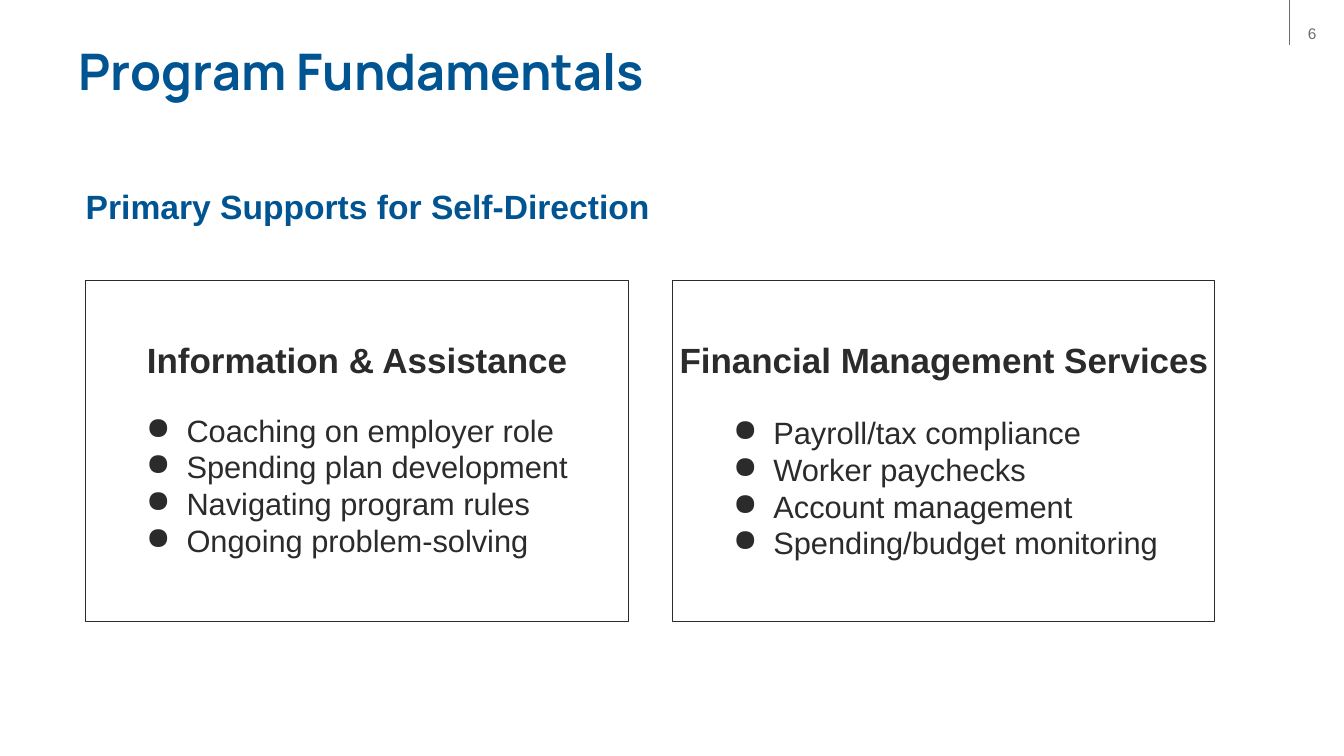
import pptx
import pptx.util
import pptx.dml.color
import pptx.enum.shapes
import pptx.enum.text
import pptx.oxml.ns
import lxml.etree

WIDE, HIGH = 13.33, 7.5
HUES = {"blue": "005492", "ink": "2B2B2B", "gray": "6D6D6D"}
ALIGN = pptx.enum.text.PP_ALIGN
ANCHOR = pptx.enum.text.MSO_ANCHOR
CARDS = [
    ("Information & Assistance", 22, [
        "Coaching on employer role", "Spending plan development",
        "Navigating program rules", "Ongoing problem-solving"]),
    ("Financial Management Services", 23.5, [
        "Payroll/tax compliance", "Worker paychecks",
        "Account management", "Spending/budget monitoring"]),
]


def across(share):
    """Turn a percentage of the slide width into a length."""
    return pptx.util.Inches(WIDE * share / 100)


def down(share):
    """Turn a percentage of the slide height into a length."""
    return pptx.util.Inches(HIGH * share / 100)


def area(left, top, width, height):
    """Return a box given in percentages of the slide."""
    return across(left), down(top), across(width), down(height)


def hue(name):
    """Look up a named colour."""
    return pptx.dml.color.RGBColor.from_string(HUES[name])


def frame(shape, anchor=ANCHOR.TOP, top=0):
    """Prepare a wrapped text frame without side margins."""
    text = shape.text_frame
    text.word_wrap = True
    text.auto_size = pptx.enum.text.MSO_AUTO_SIZE.NONE
    text.vertical_anchor = anchor
    text.margin_left = text.margin_right = text.margin_bottom = 0
    text.margin_top = down(top)
    return text


def write(para, words, size, color, bold=False, face="Arial", align=ALIGN.LEFT):
    """Add one styled run to a paragraph."""
    para.alignment = align
    run = para.add_run()
    run.text = words
    run.font.name = face
    run.font.size = pptx.util.Pt(size)
    run.font.bold = bold
    run.font.color.rgb = hue(color)


def bullet(para):
    """Give a paragraph a round bullet and a hanging indent."""
    props = para._p.get_or_add_pPr()
    props.set("marL", str(pptx.util.Inches(1)))
    props.set("indent", str(pptx.util.Inches(-0.4)))
    qn = pptx.oxml.ns.qn
    tint = lxml.etree.SubElement(props, qn("a:buClr"))
    lxml.etree.SubElement(tint, qn("a:srgbClr"), val=HUES["ink"])
    lxml.etree.SubElement(props, qn("a:buChar"), char="●")


def title(slide, words):
    """Place and fill the slide title."""
    shape = slide.shapes.title
    shape.left, shape.top, shape.width, shape.height = area(5.85, 3.2, 85.37, 13.33)
    para = frame(shape, ANCHOR.MIDDLE).paragraphs[0]
    para.line_spacing = 0.9
    write(para, words, 36, "blue", True, "Manrope")


def label(slide, box, words, size, color, **style):
    """Add a one-line text box."""
    para = frame(slide.shapes.add_textbox(*box)).paragraphs[0]
    para.line_spacing = 0.9 if style.get("bold") else 1
    write(para, words, size, color, **style)


def rule(slide):
    """Draw the upright line beside the page number."""
    x = across(95.95)
    kind = pptx.enum.shapes.MSO_CONNECTOR.STRAIGHT
    line = slide.shapes.add_connector(kind, x, 0, x, down(6))
    line.line.color.rgb = hue("gray")
    line.line.width = pptx.util.Pt(0.75)
    lxml.etree.SubElement(line._element.spPr, pptx.oxml.ns.qn("a:effectLst"))


def card(slide, box, head, gap, items):
    """Add an outlined card with a heading and bullets."""
    kind = pptx.enum.shapes.MSO_SHAPE.RECTANGLE
    shape = slide.shapes.add_shape(kind, *box)
    shape.shadow.inherit = False
    shape.fill.background()
    shape.line.color.rgb = hue("ink")
    shape.line.width = pptx.util.Pt(0.75)
    text = frame(shape, top=7.7)
    para = text.paragraphs[0]
    para.space_after = pptx.util.Pt(gap)
    write(para, head, 25, "ink", True, align=ALIGN.CENTER)
    for item in items:
        para = text.add_paragraph()
        bullet(para)
        write(para, item, 22, "ink")


def main():
    """Build the slide and save it."""
    deck = pptx.Presentation()
    deck.slide_width, deck.slide_height = across(100), down(100)
    slide = deck.slides.add_slide(deck.slide_layouts[5])
    label(slide, area(95.95, 3.2, 3.38, 3.6), "6", 11, "gray", align=ALIGN.CENTER)
    rule(slide)
    title(slide, "Program Fundamentals")
    label(slide, area(6.38, 25.2, 87.32, 7.07),
          "Primary Supports for Self-Direction", 24, "blue", bold=True)
    for col, (head, gap, items) in enumerate(CARDS):
        box = area(6.38 + 43.66 * col, 37.07, 40.36, 45.2)
        card(slide, box, head, gap, items)
    deck.save("out.pptx")


if __name__ == "__main__":
    main()
